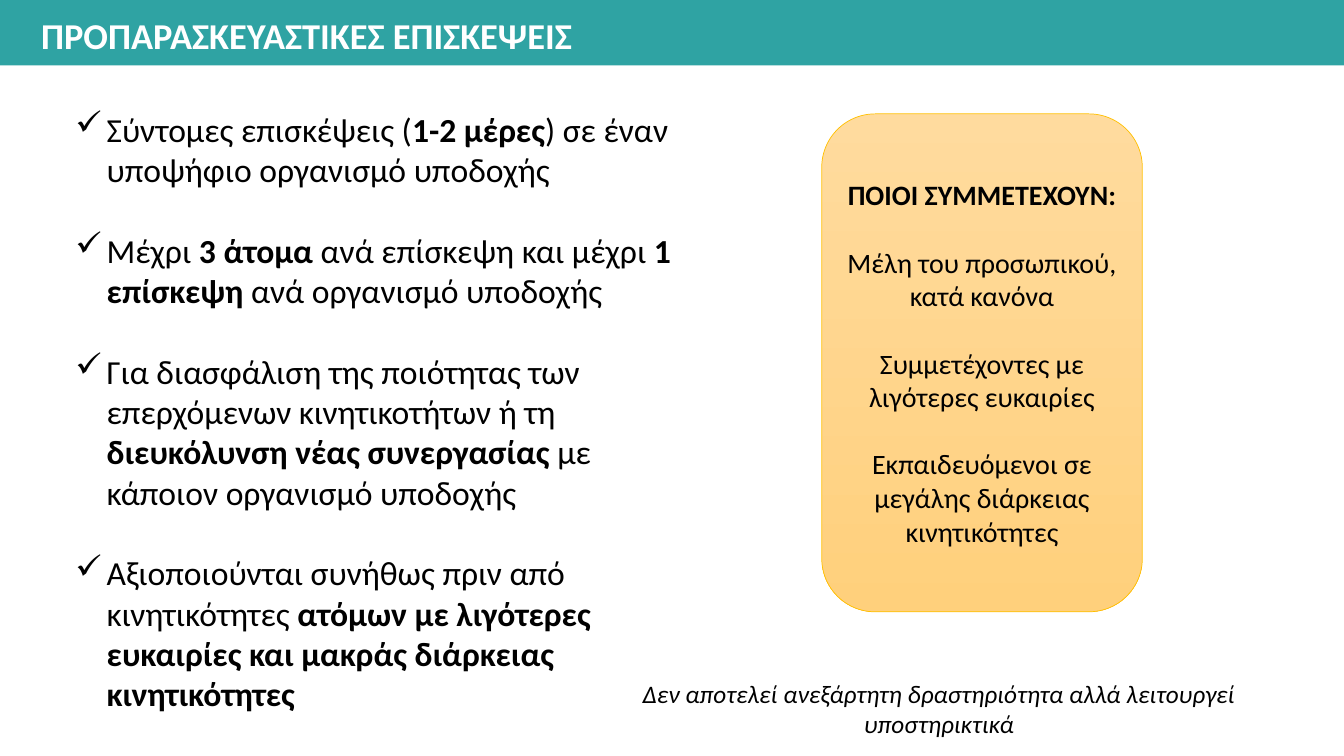
from dataclasses import dataclass

from lxml import etree
from pptx import Presentation
from pptx import util as u
from pptx.dml.color import RGBColor
from pptx.enum import shapes, text
from pptx.oxml import ns


@dataclass(frozen=True)
class Theme:
    """Colours, font and type sizes of the slide."""
    font: str = "Calibri"
    teal: str = "2FA3A3"
    white: str = "FFFFFF"
    black: str = "000000"
    card_top: str = "FFDB9E"
    card_bottom: str = "FFD07C"
    card_line: str = "FFC000"
    title: int = 26
    body: int = 24
    card: int = 20
    note: int = 18


THEME = Theme()
WIDTH, HEIGHT = 13.33, 7.5

TITLE = "ΠΡΟΠΑΡΑΣΚΕΥΑΣΤΙΚΕΣ ΕΠΙΣΚΕΨΕΙΣ"
POINTS = [
    "Σύντομες επισκέψεις (**1-2 μέρες**) σε έναν υποψήφιο οργανισμό υποδοχής",
    "Μέχρι **3 άτομα **ανά επίσκεψη και μέχρι **1 επίσκεψη **ανά οργανισμό υποδοχής",
    "Για διασφάλιση της ποιότητας των επερχόμενων κινητικοτήτων ή τη "
    "**διευκόλυνση νέας συνεργασίας **με κάποιον οργανισμό υποδοχής",
    "Αξιοποιούνται συνήθως πριν από κινητικότητες "
    "**ατόμων με λιγότερες ευκαιρίες και μακράς διάρκειας κινητικότητες**",
]
PARTICIPANTS = [
    "**ΠΟΙΟΙ ΣΥΜΜΕΤΕΧΟΥΝ:**",
    "Μέλη του προσωπικού, κατά κανόνα",
    "Συμμετέχοντες με λιγότερες ευκαιρίες",
    "Εκπαιδευόμενοι σε μεγάλης διάρκειας κινητικότητες",
]
NOTE = "Δεν αποτελεί ανεξάρτητη δραστηριότητα αλλά λειτουργεί υποστηρικτικά"


def inches(box):
    """Turn a box in inches into slide lengths."""
    return [u.Inches(length) for length in box]


def colour(code):
    """Turn a hex code into a colour."""
    return RGBColor.from_string(code)


def add_bullet(para, mark="✓", indent=0.31):
    """Give a paragraph a bullet with a hanging indent."""
    properties = para._p.get_or_add_pPr()
    properties.set("marL", str(u.Inches(indent)))
    properties.set("indent", str(-u.Inches(indent)))
    etree.SubElement(properties, ns.qn("a:buChar")).set("char", mark)


def write(frame, lines, size, color=THEME.black, italic=False, align=text.PP_ALIGN.LEFT,
          gap=0, bullet=False, wrap=True, anchor=text.MSO_ANCHOR.TOP):
    """Fill a text frame with lines in which ** switches bold on and off."""
    frame.word_wrap = wrap
    frame.vertical_anchor = anchor
    for index, line in enumerate(lines):
        para = frame.add_paragraph() if index else frame.paragraphs[0]
        para.alignment = align
        para.space_before = u.Pt(gap if index else 0)
        if bullet:
            add_bullet(para)
        for part, words in enumerate(line.split("**")):
            if words:
                span = para.add_run()
                span.text = words
                span.font.name = THEME.font
                span.font.size = u.Pt(size)
                span.font.bold = part % 2 == 1
                span.font.italic = italic
                span.font.color.rgb = colour(color)


def add_header(page, box):
    """Draw the title band with its title."""
    left, top, width, height = box
    band = page.shapes.add_shape(shapes.MSO_SHAPE.RECTANGLE, *inches(box))
    band.shadow.inherit = False
    band.fill.solid()
    band.fill.fore_color.rgb = colour(THEME.teal)
    band.line.fill.background()
    title_box = (left + 0.31, top + 0.08, 5.52, height - 0.11)
    title = page.shapes.add_textbox(*inches(title_box))
    write(title.text_frame, [f"**{TITLE}**"], THEME.title, color=THEME.white, wrap=False)


def add_points(page, box):
    """Place the ticked list."""
    points = page.shapes.add_textbox(*inches(box))
    write(points.text_frame, POINTS, THEME.body, gap=THEME.body * 1.2, bullet=True)


def add_participants(page, box):
    """Draw the rounded card that lists the participants."""
    card = page.shapes.add_shape(shapes.MSO_SHAPE.ROUNDED_RECTANGLE, *inches(box))
    card.shadow.inherit = False
    card.fill.gradient()
    card.fill.gradient_angle = 270
    for stop, code in zip(card.fill.gradient_stops, (THEME.card_top, THEME.card_bottom)):
        stop.color.rgb = colour(code)
    first, last = card.fill.gradient_stops
    first.position, last.position = 0, 1
    card.line.color.rgb = colour(THEME.card_line)
    card.line.width = u.Pt(0.5)
    write(card.text_frame, PARTICIPANTS, THEME.card, gap=THEME.card * 1.2,
          align=text.PP_ALIGN.CENTER, anchor=text.MSO_ANCHOR.MIDDLE)


def add_note(page, box):
    """Place the closing remark."""
    note = page.shapes.add_textbox(*inches(box))
    write(note.text_frame, [NOTE], THEME.note, italic=True, align=text.PP_ALIGN.CENTER)


def main():
    """Build the slide and save it."""
    deck = Presentation()
    deck.slide_width, deck.slide_height = u.Inches(WIDTH), u.Inches(HEIGHT)
    page = deck.slides.add_slide(deck.slide_layouts[6])
    add_header(page, (0, 0, WIDTH, 0.65))
    add_points(page, (0.65, 1.03, 6.27, 6.56))
    add_participants(page, (8.15, 1.13, 3.18, 4.94))
    add_note(page, (5.98, 6.68, WIDTH / 2, 0.71))
    deck.save("out.pptx")


if __name__ == "__main__":
    main()
